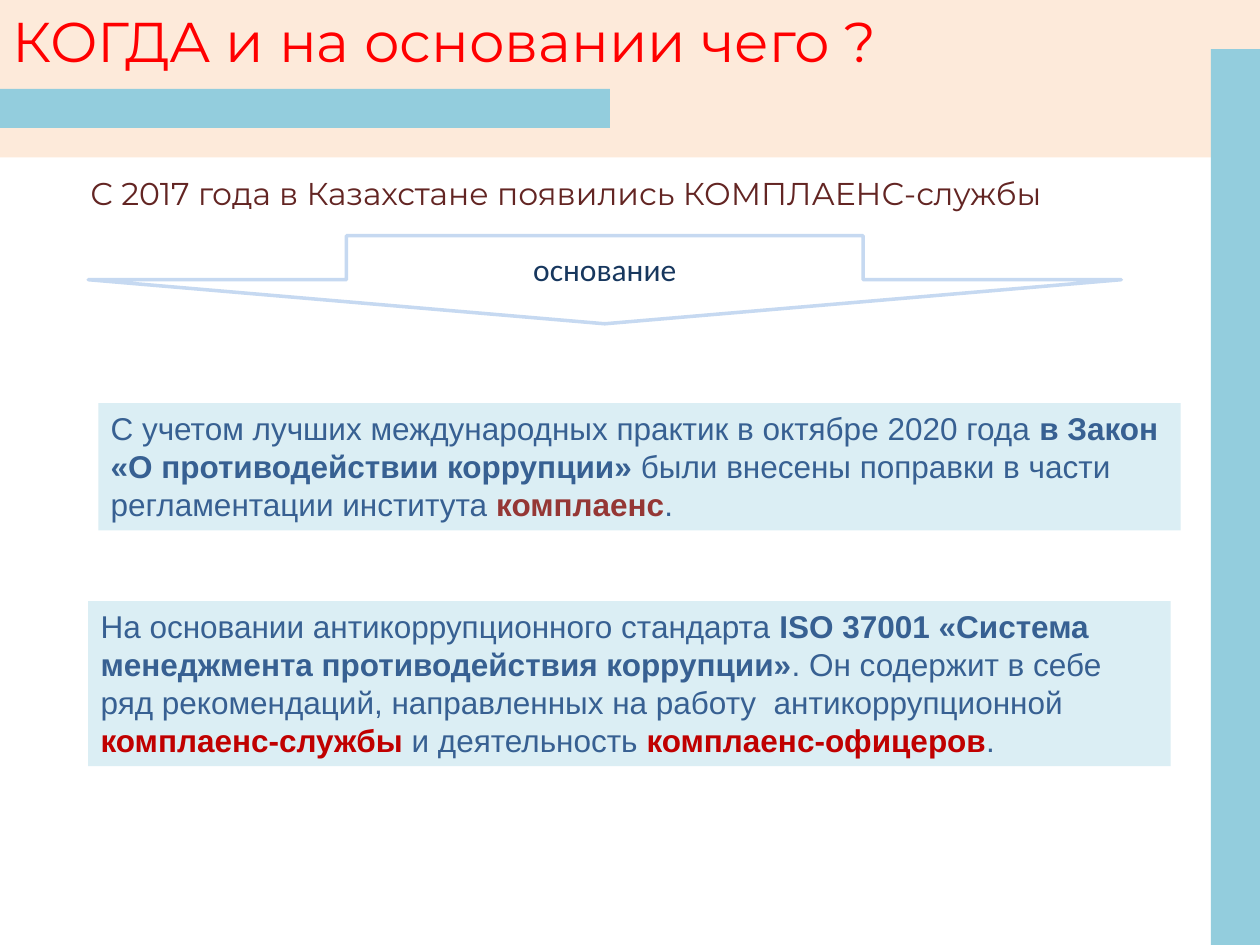
import pptx
import pptx.dml.color
import pptx.enum.shapes
import pptx.enum.text
import pptx.util

SLIDE_WIDTH = pptx.util.Inches(10)
SLIDE_HEIGHT = pptx.util.Inches(7.5)
COLUMNS, ROWS = 100, 75  # grid of tenths of an inch

COLORS = {
    "white": "FFFFFF",
    "peach": "FDEADA",
    "teal": "93CDDD",
    "pale_teal": "DBEEF4",
    "arrow_line": "C6D9F1",
    "title": "FF0000",
    "lead": "632523",
    "navy": "17375E",
    "body": "376092",
    "maroon": "953735",
    "red": "C00000",
}

SHAPES = pptx.enum.shapes.MSO_SHAPE
ANCHORS = pptx.enum.text.MSO_ANCHOR
ALIGNMENTS = pptx.enum.text.PP_ALIGN


def color(name):
    return pptx.dml.color.RGBColor.from_string(COLORS[name])


def grid_area(column, row, columns, rows):
    """Turn grid columns and rows into left, top, width and height."""
    return (
        round(SLIDE_WIDTH * column / COLUMNS),
        round(SLIDE_HEIGHT * row / ROWS),
        round(SLIDE_WIDTH * columns / COLUMNS),
        round(SLIDE_HEIGHT * rows / ROWS),
    )


def add_block(page, area, fill, kind=SHAPES.RECTANGLE, line=None):
    block = page.shapes.add_shape(kind, *grid_area(*area))
    block.shadow.inherit = False
    block.fill.solid()
    block.fill.fore_color.rgb = color(fill)
    if line:
        block.line.color.rgb = color(line)
        block.line.width = pptx.util.Pt(2)
    else:
        block.line.fill.background()
    return block


def write_text(box, spans, font, size, text_color, wrap=True,
               anchor=ANCHORS.TOP, alignment=ALIGNMENTS.LEFT):
    """Write one paragraph; a span with its own colour name is bold."""
    frame = box.text_frame
    frame.word_wrap = wrap
    frame.vertical_anchor = anchor
    para = frame.paragraphs[0]
    para.alignment = alignment
    para.font.name = font
    para.font.size = pptx.util.Pt(size)
    para.font.color.rgb = color(text_color)
    for text, bold_color in spans:
        span = para.add_run()
        span.text = text
        if bold_color:
            span.font.bold = True
            span.font.color.rgb = color(bold_color)


def add_reason(page, area, spans):
    write_text(add_block(page, area, "pale_teal"), spans, "Arial", 18, "body")


def add_lead(page, area, text):
    box = page.shapes.add_textbox(*grid_area(*area))
    write_text(box, [(text, None)], "Montserrat", 18, "lead", wrap=False)


def main():
    deck = pptx.Presentation()
    deck.slide_width, deck.slide_height = SLIDE_WIDTH, SLIDE_HEIGHT
    page = deck.slides.add_slide(deck.slide_layouts[6])

    # Lead sentence and the arrow below it
    add_lead(page, (6.2, 13.3, 86, 4),
             "С 2017 года в Казахстане появились КОМПЛАЕНС-службы")
    arrow = add_block(page, (7, 18.7, 82, 7), "white",
                      SHAPES.DOWN_ARROW, "arrow_line")
    write_text(arrow, [("основание", None)], "Calibri", 18, "navy",
               anchor=ANCHORS.MIDDLE, alignment=ALIGNMENTS.CENTER)

    # The two reasons
    add_reason(page, (7.8, 32, 85.9, 10.1), [
        ("С учетом лучших международных практик в октябре 2020 года ", None),
        ("в Закон «О противодействии коррупции»", "body"),
        (" были внесены поправки в части регламентации института ", None),
        ("комплаенс", "maroon"),
        (".", None),
    ])
    add_reason(page, (7, 47.7, 85.9, 13.1), [
        ("На основании антикоррупционного стандарта ", None),
        ("ISO 37001 «Система менеджмента противодействия коррупции»", "body"),
        (". Он содержит в себе ряд рекомендаций, направленных на работу  "
         "антикоррупционной ", None),
        ("комплаенс-службы ", "red"),
        ("и деятельность ", None),
        ("комплаенс-офицеров", "red"),
        (".", None),
    ])

    # Title banner
    banner = add_block(page, (0, 0, COLUMNS, 12.5), "peach")
    write_text(banner, [("КОГДА и на основании чего ?", None)],
               "Montserrat", 32, "title")

    # Side and title bars
    add_block(page, (96.1, 3.9, 3.9, 71.1), "teal")
    add_block(page, (0, 7.05, 48.4, 3.1), "teal")

    deck.save("out.pptx")


if __name__ == "__main__":
    main()
